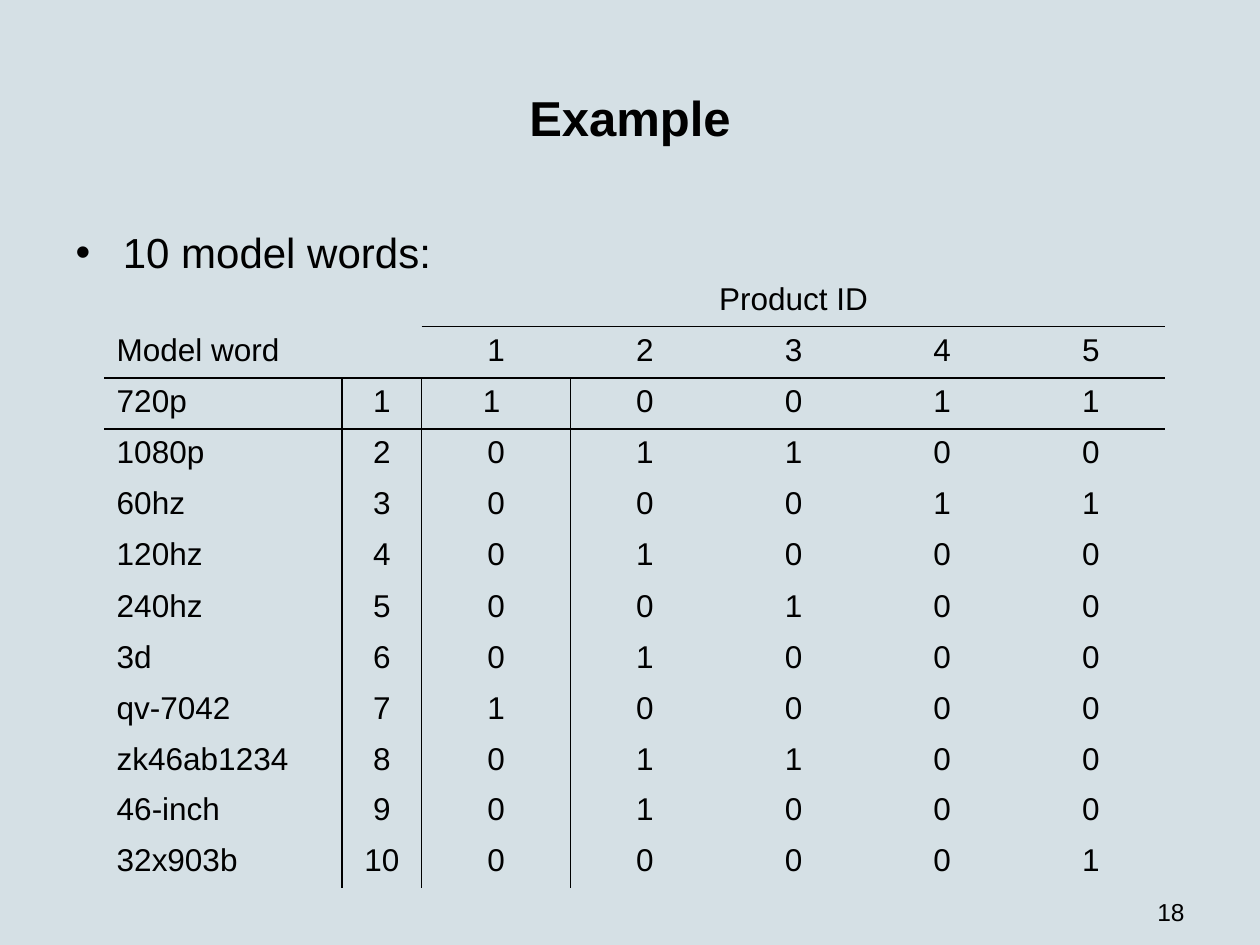
import pptx
import pptx.dml.color
import pptx.enum.text
import pptx.oxml
import pptx.oxml.ns
import pptx.util

Pt = pptx.util.Pt
ALIGN = pptx.enum.text.PP_ALIGN
ANCHOR = pptx.enum.text.MSO_ANCHOR
COLORS = {"ground": "D5E0E5", "ink": "000000"}
NS = pptx.oxml.ns.nsdecls("a")
PLAIN_STYLE = "{2D5ABB26-0587-4C30-8999-92F81FD0307C}"
COLUMN_WIDTHS = [136, 45.5] + [85] * 5
ROW_HEIGHTS = [29.2] * 9 + [25.2] + [29.2] * 2
MODEL_WORDS = [
    ("720p", "1 0 0 1 1"),
    ("1080p", "0 1 1 0 0"),
    ("60hz", "0 0 0 1 1"),
    ("120hz", "0 1 0 0 0"),
    ("240hz", "0 0 1 0 0"),
    ("3d", "0 1 0 0 0"),
    ("qv-7042", "1 0 0 0 0"),
    ("zk46ab1234", "0 1 1 0 0"),
    ("46-inch", "0 1 0 0 0"),
    ("32x903b", "0 0 0 0 1"),
]


def rgb(name):
    return pptx.dml.color.RGBColor.from_string(COLORS[name])


def apply_format(target, values):
    for name, value in values.items():
        setattr(target, name, value)


def place(shape, left, top, width, height):
    apply_format(shape, {"left": Pt(left), "top": Pt(top),
                         "width": Pt(width), "height": Pt(height)})


def write(frame, text, size, align=ALIGN.LEFT, bold=False):
    paragraph = frame.paragraphs[0]
    paragraph.alignment = align
    run = paragraph.add_run()
    run.text = text
    apply_format(run.font, {"name": "Arial", "size": Pt(size), "bold": bold})
    run.font.color.rgb = rgb("ink")
    return paragraph


def add_title(slide, text):
    title = slide.shapes.title
    place(title, 36, 21.6, 648, 90)
    title.text_frame.vertical_anchor = ANCHOR.MIDDLE
    write(title.text_frame, text, 28, ALIGN.CENTER, True)


def add_bullet(slide, text):
    body = slide.placeholders[1]
    place(body, 36, 126, 648, 356.4)
    properties = write(body.text_frame, text, 24)._p.get_or_add_pPr()
    apply_format(properties, {"marL": Pt(27), "indent": Pt(-27)})
    for tag in ("spcBef", "spcAft"):
        properties.append(pptx.oxml.parse_xml(
            f'<a:{tag} {NS}><a:spcPct val="10000"/></a:{tag}>'))
    properties.append(pptx.oxml.parse_xml(f'<a:buChar {NS} char="•"/>'))


def add_page_number(slide, text):
    number = slide.shapes.add_textbox(Pt(516), Pt(492), Pt(168), Pt(37.2))
    apply_format(number.text_frame, {"word_wrap": True, "margin_bottom": 0,
                                     "vertical_anchor": ANCHOR.BOTTOM})
    write(number.text_frame, text, 14, ALIGN.RIGHT)


def ruled_below(row, column):
    return row == 1 or (row == 0 and column >= 2)


def ruled_right(row, column):
    return row >= 2 and column in (0, 1)


def draw_borders(cell, row, column):
    sides = {"L": ruled_right(row, column - 1), "R": ruled_right(row, column),
             "T": ruled_below(row - 1, column), "B": ruled_below(row, column)}
    properties = cell._tc.get_or_add_tcPr()
    for side, ruled in sides.items():
        if ruled:
            properties.append(pptx.oxml.parse_xml(
                f'<a:ln{side} {NS} w="{Pt(1)}"><a:solidFill>'
                f'<a:srgbClr val="{COLORS["ink"]}"/></a:solidFill></a:ln{side}>'))


def add_incidence_table(slide, rows):
    frame = slide.shapes.add_table(
        len(rows), len(COLUMN_WIDTHS), Pt(59.5), Pt(157.5),
        Pt(sum(COLUMN_WIDTHS)), Pt(sum(ROW_HEIGHTS)))
    table = frame.table
    apply_format(table, {"first_row": False, "horz_banding": False})
    table._tbl.tblPr.find(pptx.oxml.ns.qn("a:tableStyleId")).text = PLAIN_STYLE
    for column, width in zip(table.columns, COLUMN_WIDTHS):
        column.width = Pt(width)
    for row, height in zip(table.rows, ROW_HEIGHTS):
        row.height = Pt(height)
    for row, texts in enumerate(rows):
        for column, text in enumerate(texts):
            cell = table.cell(row, column)
            draw_borders(cell, row, column)
            cell.fill.background()
            if text:
                write(cell.text_frame, text, 18,
                      ALIGN.CENTER if column else ALIGN.LEFT)
    for row, first, last in ((0, 0, 1), (0, 3, 5), (1, 0, 1)):
        table.cell(row, first).merge(table.cell(row, last))


def main():
    """Build the slide with the model word and product table."""
    deck = pptx.Presentation()
    apply_format(deck, {"slide_width": Pt(720), "slide_height": Pt(540)})
    slide = deck.slides.add_slide(deck.slide_layouts[1])
    slide.background.fill.solid()
    slide.background.fill.fore_color.rgb = rgb("ground")
    add_title(slide, "Example")
    add_bullet(slide, "10 model words:")
    add_page_number(slide, "18")
    rows = [["", "", "", "Product ID", "", "", ""],
            ["Model word", "", "1", "2", "3", "4", "5"]]
    for index, (word, flags) in enumerate(MODEL_WORDS, 1):
        rows.append([word, str(index)] + flags.split())
    rows[2][2] += " "
    add_incidence_table(slide, rows)
    deck.save("out.pptx")


if __name__ == "__main__":
    main()
